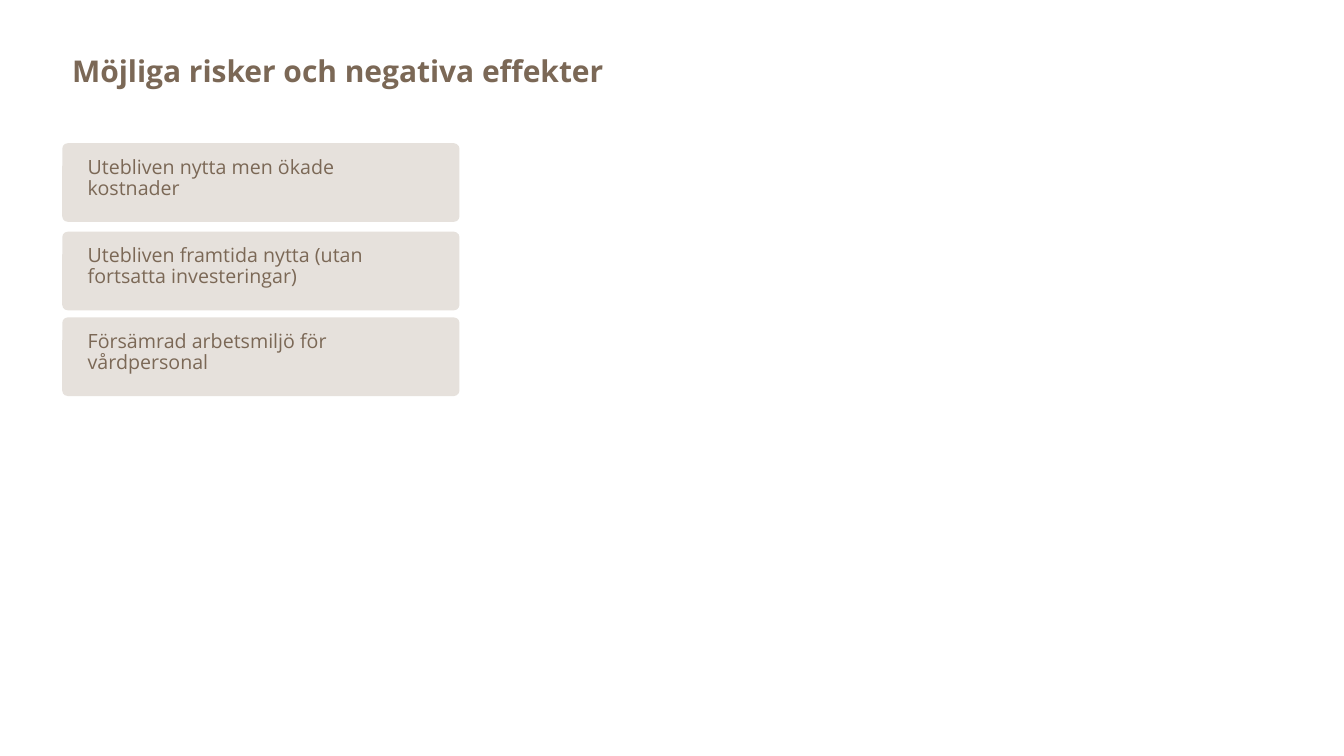
import dataclasses

import pptx
import pptx.dml.color
import pptx.enum.shapes
import pptx.enum.text
import pptx.slide
import pptx.util
from pptx.util import Cm

BROWN = pptx.dml.color.RGBColor(0x7B, 0x68, 0x56)
SAND = pptx.dml.color.RGBColor(0xE6, 0xE1, 0xDC)
WHITE = pptx.dml.color.RGBColor(0xFF, 0xFF, 0xFF)
FONT = "Open Sans"

# Card geometry
CARD_LEFT, CARD_WIDTH, CARD_HEIGHT = Cm(1.57), Cm(10.01), Cm(1.98)
LABEL_INDENT, LABEL_DROP, LABEL_WIDTH = Cm(0.39), Cm(0.23), Cm(7.82)


@dataclasses.dataclass(frozen=True)
class Risk:
    text: str
    top: float
    label_height: float


RISKS = [
    Risk("Utebliven nytta men ökade kostnader", 3.61, 1.45),
    Risk("Utebliven framtida nytta (utan fortsatta investeringar)", 5.84, 1.96),
    Risk("Försämrad arbetsmiljö för vårdpersonal", 8.0, 1.96),
]


def add_text(page: pptx.slide.Slide, text: str, left: int, top: int,
             width: int, height: int, size: float, bold: bool = False) -> None:
    box = page.shapes.add_textbox(left, top, width, height)
    frame = box.text_frame
    frame.word_wrap = True
    frame.vertical_anchor = pptx.enum.text.MSO_ANCHOR.TOP
    frame.text = text
    para = frame.paragraphs[0]
    para.line_spacing = 0.9
    span = para.runs[0]
    span.font.name = FONT
    span.font.size = pptx.util.Pt(size)
    span.font.bold = bold
    span.font.color.rgb = BROWN


def add_risk(page: pptx.slide.Slide, risk: Risk) -> None:
    top = Cm(risk.top)
    card = page.shapes.add_shape(
        pptx.enum.shapes.MSO_SHAPE.ROUNDED_RECTANGLE,
        CARD_LEFT, top, CARD_WIDTH, CARD_HEIGHT)
    card.adjustments[0] = 0.07
    card.shadow.inherit = False
    card.fill.solid()
    card.fill.fore_color.rgb = SAND
    card.line.fill.background()
    add_text(page, risk.text, CARD_LEFT + LABEL_INDENT, top + LABEL_DROP,
             LABEL_WIDTH, Cm(risk.label_height), 14)


def main() -> None:
    deck = pptx.Presentation()
    deck.slide_width, deck.slide_height = Cm(33.87), Cm(19.05)
    page = deck.slides.add_slide(deck.slide_layouts[6])
    page.background.fill.solid()
    page.background.fill.fore_color.rgb = WHITE

    # Heading
    add_text(page, "Möjliga risker och negativa effekter",
             CARD_LEFT, Cm(1.3), Cm(25.76), Cm(1.98), 21.4, bold=True)

    # Risk cards
    for risk in RISKS:
        add_risk(page, risk)

    deck.save("out.pptx")


if __name__ == "__main__":
    main()
